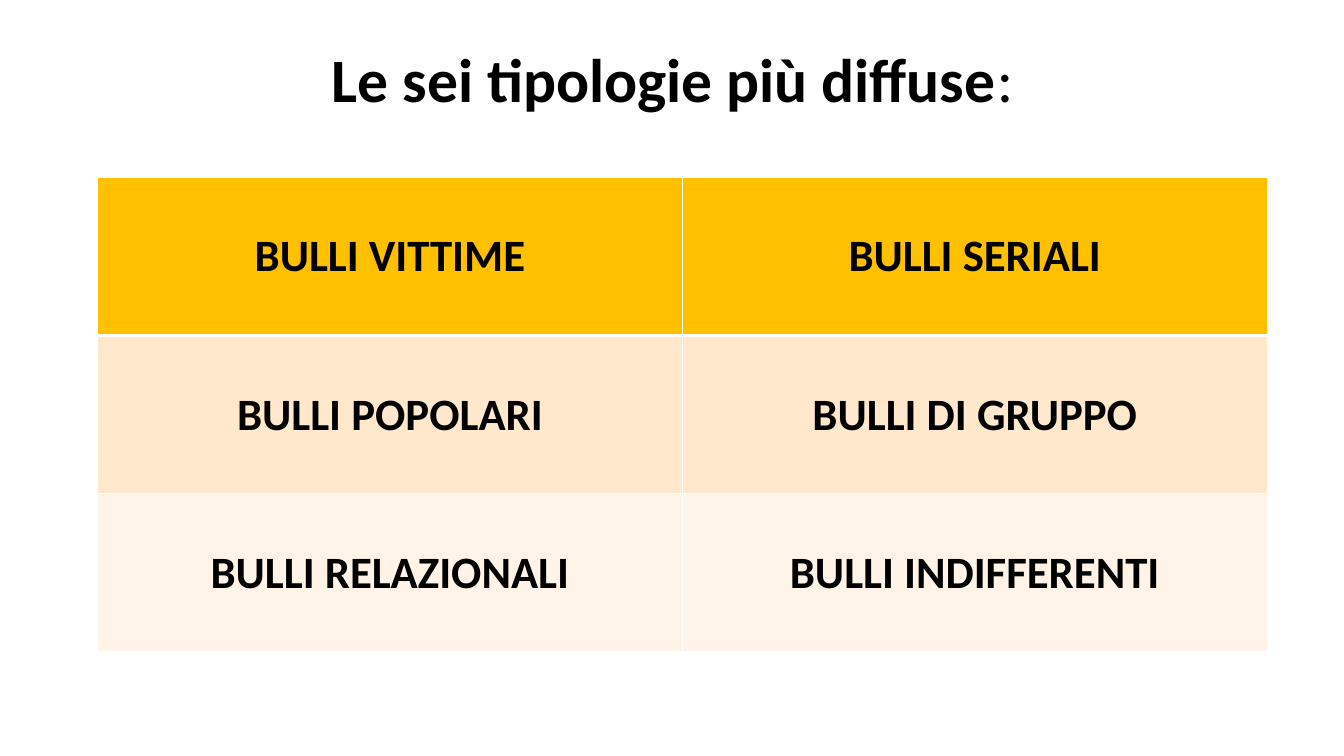
"""Build the slide listing the six most common types of bullies."""
from dataclasses import dataclass

from lxml import etree
from pptx import Presentation
from pptx import util as u
from pptx.dml.color import RGBColor
from pptx.enum import text
from pptx.oxml.ns import qn


@dataclass(frozen=True)
class Theme:
    """Colours, font and type sizes of the slide."""
    font: str = "Calibri"
    ink: str = "000000"
    rule: str = "FFFFFF"
    title_size: int = 44
    cell_size: int = 32


@dataclass(frozen=True)
class Row:
    """A table row with its fill and the weight of its lower rule."""
    labels: tuple[str, ...]
    fill: str
    rule_below: int = 1


THEME = Theme()
ROWS = (
    Row(("BULLI VITTIME", "BULLI SERIALI"), "FFC000", 3),
    Row(("BULLI POPOLARI", "BULLI DI GRUPPO"), "FFE8CC"),
    Row(("BULLI RELAZIONALI", "BULLI INDIFFERENTI"), "FFF4E7"),
)


def format_span(span, size: int, bold: bool = True) -> None:
    """Apply the slide's font to a run."""
    span.font.name = THEME.font
    span.font.size = u.Pt(size)
    span.font.bold = bold
    span.font.color.rgb = RGBColor.from_string(THEME.ink)


def add_title(page) -> None:
    """Fill and place the title placeholder."""
    box = page.shapes.title
    box.left, box.top = u.Inches(0.92), u.Inches(0.4)
    box.width, box.height = u.Inches(11.5), u.Inches(0.84)
    box.text_frame.vertical_anchor = text.MSO_ANCHOR.MIDDLE
    para = box.text_frame.paragraphs[0]
    para.alignment = text.PP_ALIGN.CENTER
    para.line_spacing = 0.9
    for words, bold in (("Le sei tipologie più diffuse", True), (":", False)):
        span = para.add_run()
        span.text = words
        format_span(span, THEME.title_size, bold)


def rule_cell(cell, above: int, below: int) -> None:
    """Draw the four borders of a cell, with weights in points."""
    properties = cell._tc.get_or_add_tcPr()
    for side, weight in (("L", 1), ("R", 1), ("T", above), ("B", below)):
        line = etree.SubElement(properties, qn(f"a:ln{side}"), w=str(u.Pt(weight)))
        fill = etree.SubElement(line, qn("a:solidFill"))
        etree.SubElement(fill, qn("a:srgbClr"), val=THEME.rule)


def add_types_table(page) -> None:
    """Add the table of bully types."""
    columns = len(ROWS[0].labels)
    frame = page.shapes.add_table(
        len(ROWS), columns, u.Inches(0.97), u.Inches(1.76),
        u.Inches(5.8 * columns), u.Inches(1.57 * len(ROWS)))
    above = 1
    for index, row in enumerate(ROWS):
        for column, label in enumerate(row.labels):
            cell = frame.table.cell(index, column)
            rule_cell(cell, above, row.rule_below)
            cell.fill.solid()
            cell.fill.fore_color.rgb = RGBColor.from_string(row.fill)
            cell.vertical_anchor = text.MSO_ANCHOR.MIDDLE
            para = cell.text_frame.paragraphs[0]
            para.text = label
            para.alignment = text.PP_ALIGN.CENTER
            format_span(para.runs[0], THEME.cell_size)
        above = row.rule_below


def main() -> None:
    """Build and save the deck."""
    deck = Presentation()
    deck.slide_width, deck.slide_height = u.Inches(13.33), u.Inches(7.5)
    page = deck.slides.add_slide(deck.slide_layouts.get_by_name("Title Only"))
    add_title(page)
    add_types_table(page)
    deck.save("out.pptx")


if __name__ == "__main__":
    main()
